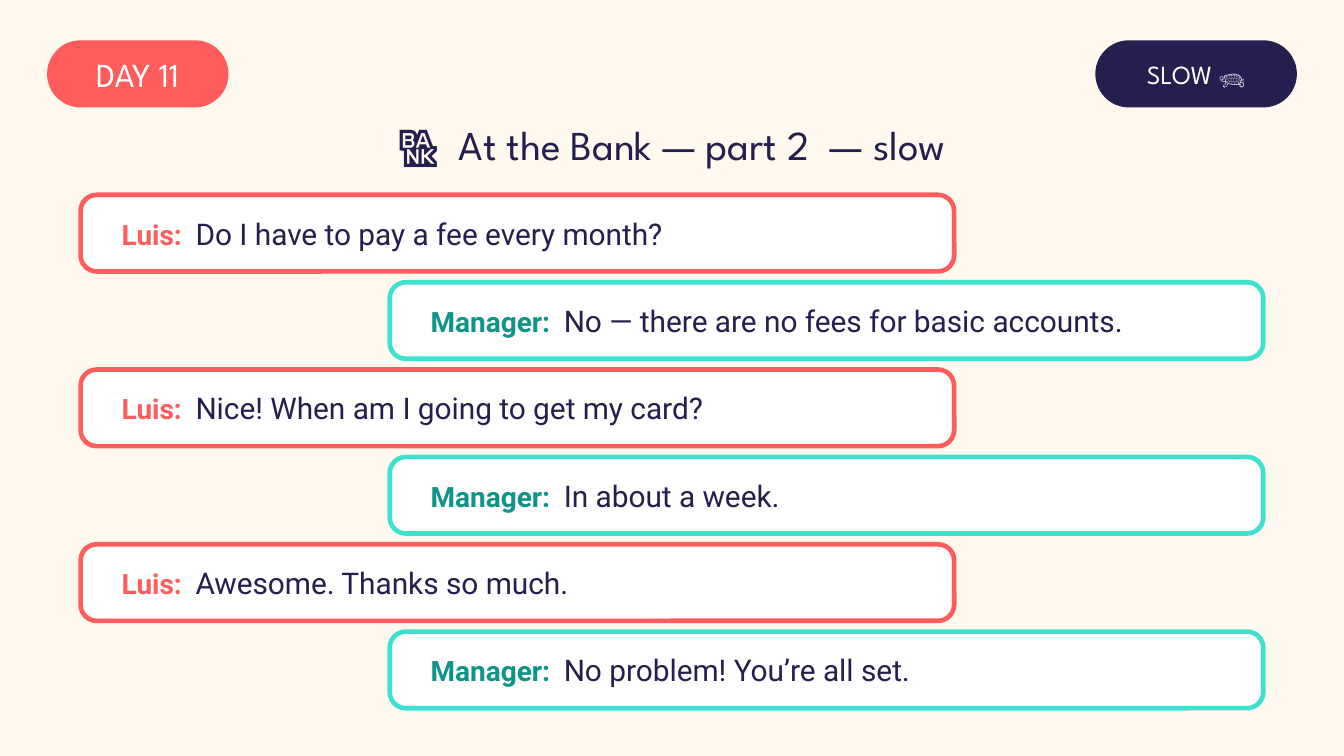
import pptx
import pptx.util
import pptx.dml.color
import pptx.enum.shapes
import pptx.enum.text
import pptx.oxml
import pptx.oxml.ns
from pptx.util import Inches

CREAM, WHITE, NAVY = "FFF9EF", "FFFFFF", "241F4E"
CORAL, TURQUOISE, TEAL = "FF5D5D", "3EE0CF", "0E9488"


def color(hex_code):
    return pptx.dml.color.RGBColor.from_string(hex_code)


def style_font(font, name, size, hex_code, bold=False):
    font.name = name
    font.size = pptx.util.Pt(size)
    font.bold = bold
    font.color.rgb = color(hex_code)


prs = pptx.Presentation()
prs.slide_width = Inches(10)
prs.slide_height = Inches(10 * 9 / 16)
slide = prs.slides.add_slide(prs.slide_layouts[5])
slide.background.fill.solid()
slide.background.fill.fore_color.rgb = color(CREAM)

rounded = pptx.enum.shapes.MSO_SHAPE.ROUNDED_RECTANGLE
middle = pptx.enum.text.MSO_ANCHOR.MIDDLE
align = pptx.enum.text.PP_ALIGN

# Day and speed badges
for label, left, width, fill, size in [
    ("DAY 11", 0.35, 1.35, CORAL, 18),
    ("SLOW 🐢", 8.15, 1.5, NAVY, 14),
]:
    badge = slide.shapes.add_shape(
        rounded, Inches(left), Inches(0.3), Inches(width), Inches(0.5))
    badge.adjustments[0] = 0.5
    badge.shadow.inherit = False
    badge.fill.solid()
    badge.fill.fore_color.rgb = color(fill)
    badge.line.fill.background()
    frame = badge.text_frame
    frame.margin_left = frame.margin_right = 0
    frame.margin_top = frame.margin_bottom = 0
    frame.vertical_anchor = middle
    frame.text = label
    frame.paragraphs[0].alignment = align.CENTER
    style_font(frame.paragraphs[0].runs[0].font, "League Spartan", size, WHITE)

# Title
title = slide.shapes.title
title.left, title.top = Inches(0), Inches(0.82)
title.width, title.height = Inches(10), Inches(0.5)
title.text_frame.text = "🏦  At the Bank — part 2  — slow"
title.text_frame.auto_size = pptx.enum.text.MSO_AUTO_SIZE.NONE
title.text_frame.vertical_anchor = middle
heading = title.text_frame.paragraphs[0]
heading.alignment = align.CENTER
style_font(heading.runs[0].font, "League Spartan", 22, NAVY)

# Dialogue bubbles: left edge, outline, name colour, tab stop after the name
speakers = {
    "Luis": (0.6, CORAL, CORAL, 0.55),
    "Manager": (2.9, TURQUOISE, TEAL, 0.99),
}
dialogue = [
    ("Luis", "Do I have to pay a fee every month?"),
    ("Manager", "No — there are no fees for basic accounts."),
    ("Luis", "Nice! When am I going to get my card?"),
    ("Manager", "In about a week."),
    ("Luis", "Awesome. Thanks so much."),
    ("Manager", "No problem! You’re all set."),
]
for row, (speaker, sentence) in enumerate(dialogue):
    left, outline, name_color, tab_stop = speakers[speaker]
    bubble = slide.shapes.add_shape(
        rounded, Inches(left), Inches(1.45 + row * 0.65), Inches(6.5), Inches(0.57))
    bubble.adjustments[0] = 0.21
    bubble.shadow.inherit = False
    bubble.fill.solid()
    bubble.fill.fore_color.rgb = color(WHITE)
    bubble.line.color.rgb = color(outline)
    bubble.line.width = pptx.util.Pt(2.5)
    frame = bubble.text_frame
    frame.margin_left = Inches(0.27)
    frame.vertical_anchor = middle
    line = frame.paragraphs[0]
    line.alignment = align.LEFT
    tabs = pptx.oxml.parse_xml(
        f'<a:tabLst {pptx.oxml.ns.nsdecls("a")}>'
        f'<a:tab pos="{Inches(tab_stop)}" algn="l"/></a:tabLst>')
    line._p.get_or_add_pPr().append(tabs)
    name_run, sentence_run = line.add_run(), line.add_run()
    name_run.text = f"{speaker}:\t"
    style_font(name_run.font, "Roboto", 15, name_color, bold=True)
    sentence_run.text = sentence
    style_font(sentence_run.font, "Roboto", 16, NAVY)

prs.save("out.pptx")
